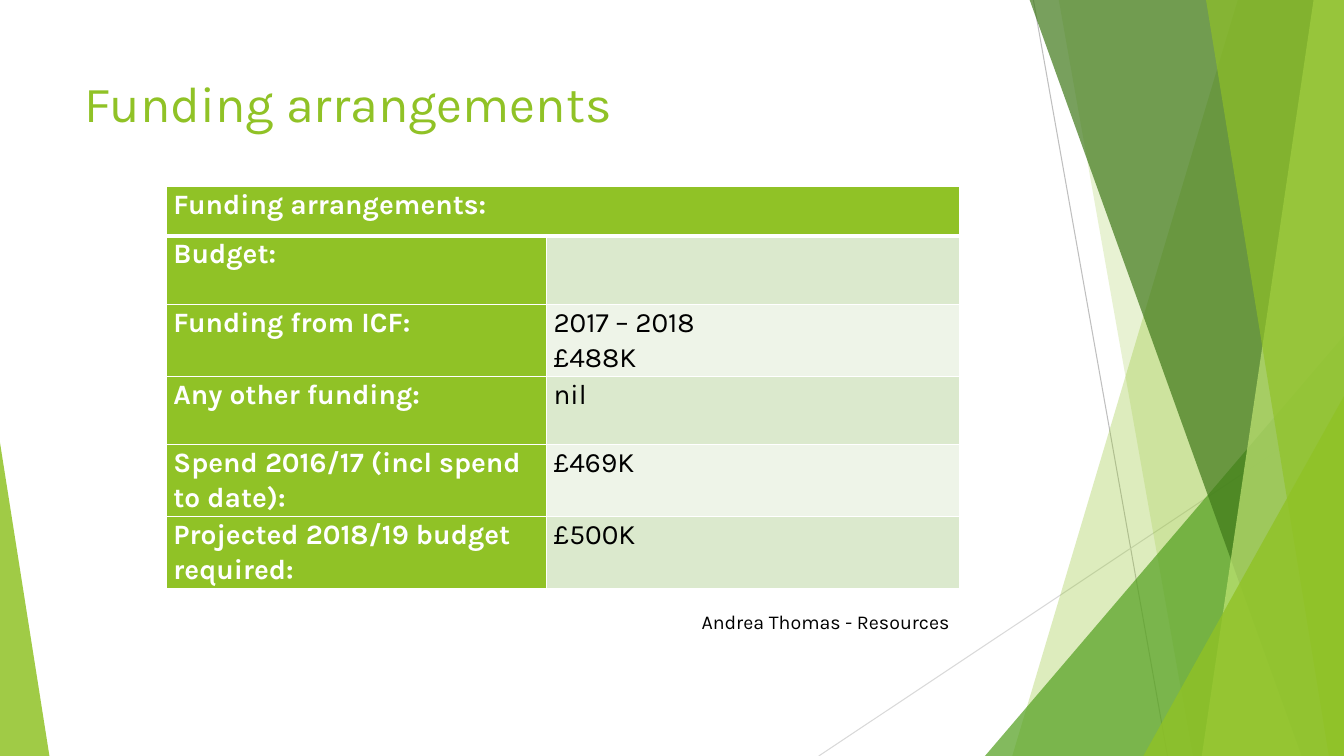
from dataclasses import dataclass

import lxml.etree
import pptx
import pptx.dml.color
import pptx.enum.shapes
import pptx.enum.text
import pptx.oxml.ns
import pptx.util

RGB = pptx.dml.color.RGBColor
LIME = RGB(0x90, 0xC2, 0x26)
GREEN = RGB(0x54, 0xA0, 0x21)
FOREST = RGB(0x3F, 0x78, 0x19)
PALE_LIME = RGB(0xC0, 0xE4, 0x74)
BAND_DARK = RGB(0xDB, 0xE9, 0xCD)
BAND_LIGHT = RGB(0xEE, 0xF4, 0xE8)
GREY = RGB(0xBF, 0xBF, 0xBF)
LIGHT_GREY = RGB(0xD9, 0xD9, 0xD9)
WHITE = RGB(0xFF, 0xFF, 0xFF)
BLACK = RGB(0x00, 0x00, 0x00)

FONT = "Karla"
WIDTH = pptx.util.Inches(13.33)
HEIGHT = pptx.util.Inches(7.5)
TOP = -0.13  # the facets start just above the page


# All positions are percentages of the slide's width and height.
def across(share: float) -> int:
    return round(WIDTH * share / 100)


def down(share: float) -> int:
    return round(HEIGHT * share / 100)


@dataclass
class Ray:
    start: tuple[float, float]
    end: tuple[float, float]
    color: RGB


@dataclass
class Facet:
    """A panel from its slanted left edge to the right side of the slide."""
    top_left: float
    bottom_left: float
    color: RGB
    opacity: int


@dataclass
class Corner:
    """A right triangle standing on the bottom edge."""
    left: float
    top: float
    width: float
    apex: float
    color: RGB
    opacity: int


@dataclass
class FundingRow:
    label: str
    values: tuple[str, ...] = ()


RAYS = [
    Ray((76.89, 0), (86.87, 100), GREY),
    Ray((100, 53.73), (60.92, 100), LIGHT_GREY),
]
DECORATION = [
    Facet(92.12, 75.32, LIME, 30),
    Facet(78.77, 88.75, LIME, 20),
    Corner(73.29, 44.4, 26.71, 1, GREEN, 72),
    Facet(76.59, 96.85, FOREST, 70),
    Facet(97.75, 89.42, PALE_LIME, 70),
    Facet(89.72, 98.87, LIME, 65),
    Corner(85.07, 52.4, 14.93, 1, LIME, 80),
    Corner(0, 58.53, 3.68, 0, LIME, 85),
]
FUNDING = [
    FundingRow("Budget:"),
    FundingRow("Funding from ICF:", ("2017 – 2018", "£488K")),
    FundingRow("Any other funding:", ("nil",)),
    FundingRow("Spend 2016/17 (incl spend to date):", ("£469K",)),
    FundingRow("Projected 2018/19 budget required:", ("£500K",)),
]
COLUMNS = (28.28, 30.76)
HEADER_ROW, BODY_ROW = 6.53, 9.07


def add_node(parent, tag: str, **attributes: str):
    return lxml.etree.SubElement(parent, pptx.oxml.ns.qn(tag), attributes)


def write(frame, *lines: str, size: float, color: RGB, bold: bool = False,
          align=pptx.enum.text.PP_ALIGN.LEFT, spacing: float = 1.0) -> None:
    frame.word_wrap = True
    for index, line in enumerate(lines):
        para = frame.add_paragraph() if index else frame.paragraphs[0]
        para.alignment = align
        para.line_spacing = spacing
        span = para.add_run()
        span.text = line
        span.font.name = FONT
        span.font.size = pptx.util.Pt(size)
        span.font.bold = bold
        span.font.color.rgb = color


def add_text(page, left: float, top: float, width: float, height: float,
             text: str, **text_format) -> None:
    box = page.shapes.add_textbox(across(left), down(top), across(width), down(height))
    write(box.text_frame, text, **text_format)


def draw_ray(page, ray: Ray) -> None:
    line = page.shapes.add_connector(
        pptx.enum.shapes.MSO_CONNECTOR.STRAIGHT,
        across(ray.start[0]), down(ray.start[1]), across(ray.end[0]), down(ray.end[1]))
    line.line.color.rgb = ray.color
    line.line.width = pptx.util.Pt(0.75)
    add_node(line.element.spPr, "a:effectLst")


def draw_decoration(page, part: Facet | Corner) -> None:
    if isinstance(part, Facet):
        outline = page.shapes.build_freeform(across(part.top_left), down(TOP))
        outline.add_line_segments([
            (across(100), down(TOP)), (across(100), down(100)),
            (across(part.bottom_left), down(100))])
        shape = outline.convert_to_shape()
    else:
        shape = page.shapes.add_shape(
            pptx.enum.shapes.MSO_SHAPE.ISOSCELES_TRIANGLE, across(part.left),
            down(part.top), across(part.width), down(100 - part.top))
        shape.adjustments[0] = part.apex
    shape.shadow.inherit = False
    shape.line.fill.background()
    shape.fill.solid()
    shape.fill.fore_color.rgb = part.color
    tint = shape.element.spPr.find(".//" + pptx.oxml.ns.qn("a:srgbClr"))
    add_node(tint, "a:alpha", val=str(part.opacity * 1000))


def format_cell(cell, fill: RGB, *lines: str, color: RGB = WHITE, bold: bool = True,
                top: float = 1, bottom: float = 1) -> None:
    cell.margin_left = cell.margin_right = pptx.util.Inches(0.07)
    cell.margin_top = cell.margin_bottom = 0
    properties = cell._tc.get_or_add_tcPr()
    for side, points in (("L", 1), ("R", 1), ("T", top), ("B", bottom)):
        border = add_node(properties, f"a:ln{side}", w=str(pptx.util.Pt(points)))
        add_node(add_node(border, "a:solidFill"), "a:srgbClr", val=str(WHITE))
    cell.fill.solid()
    cell.fill.fore_color.rgb = fill
    write(cell.text_frame, *lines, size=20, color=color, bold=bold, spacing=1.07)


def add_funding_table(page) -> None:
    heights = [HEADER_ROW] + [BODY_ROW] * len(FUNDING)
    table = page.shapes.add_table(
        len(heights), len(COLUMNS), across(12.38), down(24.67),
        across(sum(COLUMNS)), down(sum(heights))).table
    for column, width in zip(table.columns, COLUMNS):
        column.width = across(width)
    for row, height in zip(table.rows, heights):
        row.height = down(height)

    format_cell(table.cell(0, 0), LIME, "Funding arrangements:", bottom=3)
    format_cell(table.cell(0, 1), LIME, bottom=3)
    table.cell(0, 0).merge(table.cell(0, 1))
    for index, entry in enumerate(FUNDING, start=1):
        top = 3 if index == 1 else 1
        band = BAND_DARK if index % 2 else BAND_LIGHT
        format_cell(table.cell(index, 0), LIME, entry.label, top=top)
        format_cell(table.cell(index, 1), band, *entry.values,
                    color=BLACK, bold=False, top=top)


def main() -> None:
    deck = pptx.Presentation()
    deck.slide_width, deck.slide_height = WIDTH, HEIGHT
    page = deck.slides.add_slide(deck.slide_layouts[6])

    # Background decoration
    for ray in RAYS:
        draw_ray(page, ray)
    for part in DECORATION:
        draw_decoration(page, part)

    # Content
    add_text(page, 5.55, 8.93, 70.52, 19.2, "Funding arrangements", size=36, color=LIME)
    add_funding_table(page)
    add_text(page, 46.59, 80, 24.83, 4.53, "Andrea Thomas - Resources",
             size=14, color=BLACK, align=pptx.enum.text.PP_ALIGN.RIGHT)
    deck.save("out.pptx")


if __name__ == "__main__":
    main()
